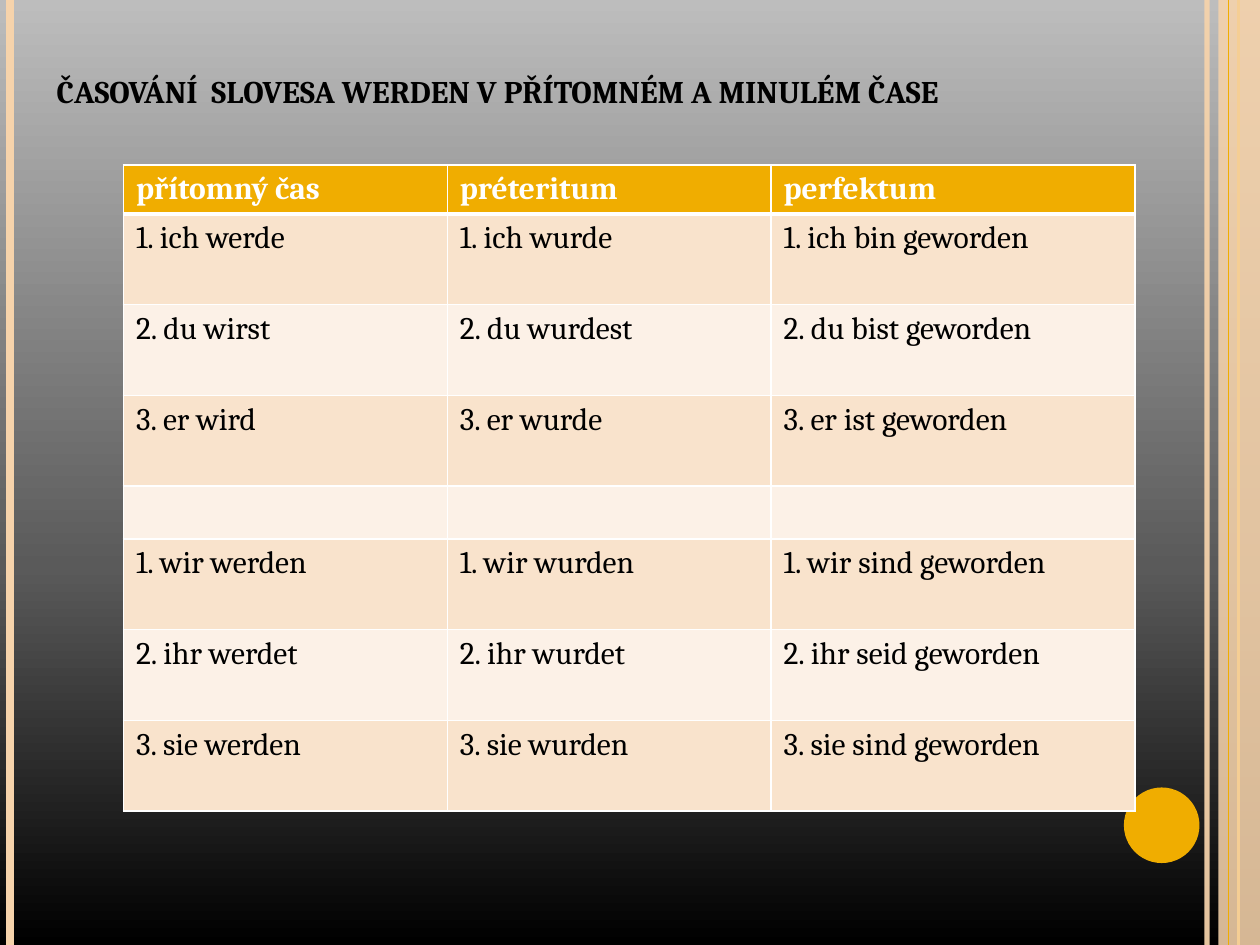
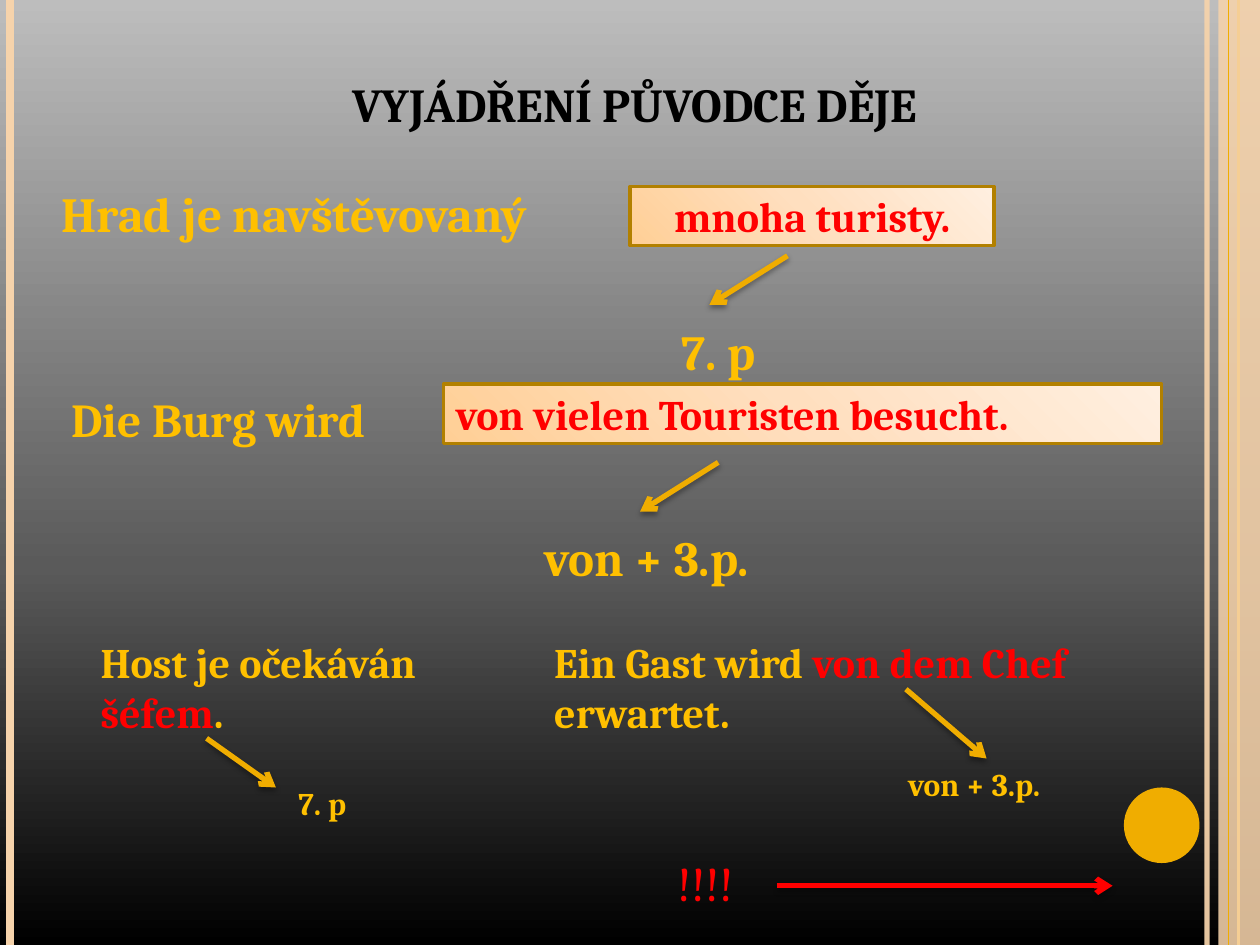
"""Build two German grammar slides: the verb werden and the agent in the passive."""
from lxml import etree
from pptx import Presentation
from pptx.dml.color import RGBColor
from pptx.enum.shapes import MSO_CONNECTOR, MSO_SHAPE
from pptx.enum.text import MSO_ANCHOR, MSO_AUTO_SIZE, PP_ALIGN
from pptx.oxml.ns import qn
from pptx.util import Inches, Pt

LINE = MSO_CONNECTOR.STRAIGHT
RECT, OVAL = MSO_SHAPE.RECTANGLE, MSO_SHAPE.OVAL
TOP, MIDDLE = MSO_ANCHOR.TOP, MSO_ANCHOR.MIDDLE
LEFT, CENTER = PP_ALIGN.LEFT, PP_ALIGN.CENTER
FIXED = MSO_AUTO_SIZE.NONE

FONT = "Cambria"
COLORS = {
    "black": "000000", "white": "FFFFFF", "red": "FF0000",
    "gold": "F0AD00", "amber": "FFC000", "brown": "B28000",
    "sand": "F6D3AB", "peach": "F9E3CC", "cream": "FCF1E7",
}
SKY = [(0, "000000"), (40, "5A5A5A"), (100, "BDBDBD")]
GLOW = [(0, "FFCF96"), (50, "FFDFBF"), (100, "FFEFE0")]

FORMS = [
    ("přítomný čas", "préteritum", "perfektum"),
    ("1. ich werde", "1. ich wurde", "1. ich bin geworden"),
    ("2. du wirst", "2. du wurdest", "2. du bist geworden"),
    ("3. er wird", "3. er wurde", "3. er ist geworden"),
    ("", "", ""),
    ("1. wir werden", "1. wir wurden", "1. wir sind geworden"),
    ("2. ihr werdet", "2. ihr wurdet", "2. ihr seid geworden"),
    ("3. sie werden", "3. sie wurden", "3. sie sind geworden"),
]


def rgb(name):
    return RGBColor.from_string(COLORS[name])


def sub(node, tag, **attrs):
    return etree.SubElement(node, qn(tag), {k: str(v) for k, v in attrs.items()})


def blend(fill, root, stops, angle):
    fill.gradient()
    fill.gradient_angle = angle
    items = next(root.iter(qn("a:gsLst")))
    for old in list(items):
        items.remove(old)
    for pos, color in stops:
        sub(sub(items, "a:gs", pos=pos * 1000), "a:srgbClr", val=color)


def fade(root, percent):
    color = next(root.iter(qn("a:srgbClr")))
    sub(color, "a:alpha", val=percent * 1000)


def style(para, size, color, bold=True, align=LEFT):
    para.alignment = align
    font = para.font
    font.name, font.size, font.bold = FONT, Pt(size), bold
    font.color.rgb = rgb(color)


def add_line(slide, start, end, color, width):
    line = slide.shapes.add_connector(LINE, *map(Inches, start + end))
    line.line.color.rgb = rgb(color)
    line.line.width = Pt(width)
    sub(line.element.spPr, "a:effectLst")
    return line


def add_arrow(slide, start, end, color="gold"):
    line = add_line(slide, start, end, color, 3)
    props = line.element.spPr
    sub(props.find(qn("a:ln")), "a:tailEnd", type="arrow")
    shade = sub(props.find(qn("a:effectLst")), "a:outerShdw", blurRad=Pt(3.1),
                dist=Pt(1.8), dir=5400000, rotWithShape=0)
    black = sub(shade, "a:srgbClr", val=COLORS["black"])
    sub(black, "a:alpha", val=35000)


def add_form(slide, kind, place, color):
    form = slide.shapes.add_shape(kind, *map(Inches, place))
    form.shadow.inherit = False
    form.fill.solid()
    form.fill.fore_color.rgb = rgb(color)
    form.line.fill.background()
    return form


def add_box(slide, place, text, align=LEFT):
    box = add_form(slide, RECT, place, "sand")
    blend(box.fill, box.element.spPr, GLOW, 45)
    box.line.color.rgb = rgb("brown")
    box.line.width = Pt(2)
    frame = box.text_frame
    frame.vertical_anchor = MIDDLE
    frame.text = text
    style(frame.paragraphs[0], 24, "red", align=align)


def add_text(slide, place, rows, size, color="amber", bold=True):
    frame = slide.shapes.add_textbox(*map(Inches, place)).text_frame
    frame.word_wrap = True
    for i, row in enumerate(rows):
        para = frame.add_paragraph() if i else frame.paragraphs[0]
        style(para, size, color, bold)
        for text, tint in row:
            run = para.add_run()
            run.text = text
            if tint:
                run.font.color.rgb = rgb(tint)


def add_label(slide, place, text, size=28, **look):
    add_text(slide, place, [[(text, None)]], size, **look)


def set_title(slide, place, text, size, align):
    title = slide.shapes.title
    title.left, title.top, title.width, title.height = map(Inches, place)
    frame = title.text_frame
    frame.text = text
    frame.word_wrap = True
    frame.auto_size = FIXED
    frame.vertical_anchor = TOP
    style(frame.paragraphs[0], size, "black", align=align)


def set_edges(cell, head, first):
    props = cell._tc.get_or_add_tcPr()
    widths = {"a:lnL": 1, "a:lnR": 1, "a:lnT": 3 if first else 1,
              "a:lnB": 3 if head else 1}
    for tag, width in widths.items():
        edge = sub(props, tag, w=Pt(width))
        sub(sub(edge, "a:solidFill"), "a:srgbClr", val=COLORS["white"])


def add_table(slide, place, data, cols, rows):
    table = slide.shapes.add_table(len(rows), len(cols), *map(Inches, place)).table
    for col, width in zip(table.columns, cols):
        col.width = Inches(width)
    for r, (row, height) in enumerate(zip(data, rows)):
        table.rows[r].height = Inches(height)
        head = r == 0
        tint = "gold" if head else ("peach" if r % 2 else "cream")
        for c, text in enumerate(row):
            cell = table.cell(r, c)
            cell.text = text
            set_edges(cell, head, r == 1)
            cell.fill.solid()
            cell.fill.fore_color.rgb = rgb(tint)
            style(cell.text_frame.paragraphs[0], 18,
                  "white" if head else "black", head)


def dress(layout, slide):
    """Give the layout its backdrop and bands, drawn by way of a slide."""
    blend(layout.background.fill, layout.element, SKY, 90)
    for spot in list(layout.placeholders):
        if spot.placeholder_format.idx:
            spot.element.getparent().remove(spot.element)
    rule = add_line(slide, (9.58, 0), (9.58, 7.5), "sand", 3)
    fade(rule.element.spPr, 93)
    band = add_form(slide, RECT, (9.67, 0, 0.33, 7.5), "sand")
    fade(band.element.spPr, 87)
    parts = [
        rule,
        add_line(slide, (0.08, 0), (0.08, 7.5), "sand", 4.5),
        add_line(slide, (9.83, 0), (9.83, 7.5), "sand", 1.5),
        band,
        add_line(slide, (9.75, 0), (9.75, 7.5), "gold", 0.75),
        add_form(slide, OVAL, (8.92, 6.25, 0.6, 0.6), "gold"),
    ]
    parts[2].line.color.rgb = rgb("gold")
    for part in parts:
        layout.shapes.element.append(part.element)


def show_verb(slide):
    set_title(slide, (0.35, 0.52, 9.06, 0.4),
              "ČASOVÁNÍ  SLOVESA WERDEN V PŘÍTOMNÉM A MINULÉM ČASE", 18, LEFT)
    tall = [0.72] * 3
    add_table(slide, (0.98, 1.31, 8.03, 5.17), FORMS,
              [2.57, 2.57, 2.89], [0.35, *tall, 0.42, *tall])


def show_agent(slide):
    set_title(slide, (1.17, 0.55, 7.73, 0.57), "VYJÁDŘENÍ PŮVODCE DĚJE", 27, CENTER)
    add_label(slide, (0.39, 1.41, 4.75, 0.57), "Hrad je navštěvovaný")
    add_label(slide, (5.31, 2.5, 0.91, 0.57), "7. p")
    add_label(slide, (0.47, 3.05, 3, 0.56), "Die Burg wird", 27)
    add_label(slide, (4.22, 4.14, 2.12, 0.57), "von + 3.p.")
    add_box(slide, (5, 1.48, 2.89, 0.47), "mnoha turisty.", CENTER)
    add_box(slide, (3.52, 3.05, 5.7, 0.47), "von vielen Touristen besucht.")
    add_text(slide, (0.7, 5, 3.67, 0.91),
             [[("Host je očekáván ", None), ("šéfem", "red"), (".", None)]], 24)
    add_text(slide, (4.3, 5, 5.21, 0.91),
             [[("Ein Gast wird ", None), ("von dem Chef", "red")],
              [("erwartet.", None)]], 24)
    add_label(slide, (2.27, 6.17, 0.66, 0.4), "7. p", 18)
    add_label(slide, (7.11, 6.02, 1.43, 0.4), "von + 3.p.", 18)
    add_label(slide, (5.28, 6.72, 1.13, 0.57), "!!!!", color="red", bold=False)
    for start, end in [((6.25, 2.03), (5.63, 2.42)), ((5.7, 3.67), (5.08, 4.06)),
                       ((1.64, 5.86), (2.19, 6.25)), ((7.19, 5.47), (7.83, 6.02))]:
        add_arrow(slide, start, end)
    add_arrow(slide, (6.17, 7.03), (8.83, 7.03), "red")


def main():
    deck = Presentation()
    deck.slide_width, deck.slide_height = Inches(10), Inches(7.5)
    layout = deck.slide_layouts[5]
    verb, agent = [deck.slides.add_slide(layout) for _ in range(2)]
    dress(layout, verb)
    show_verb(verb)
    show_agent(agent)
    deck.save("out.pptx")


if __name__ == "__main__":
    main()
